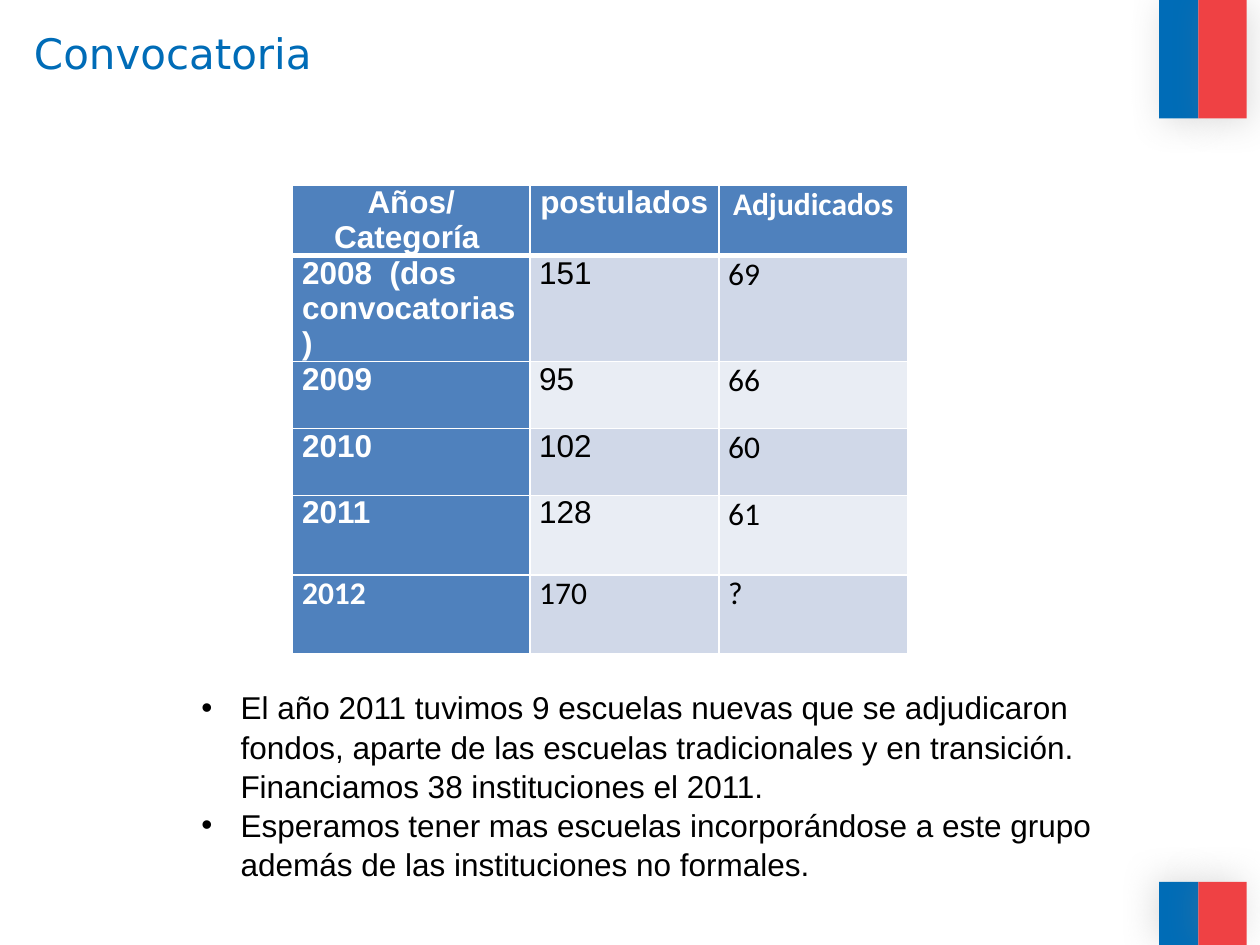
import pptx
import pptx.dml.color
import pptx.enum.shapes
import pptx.enum.text
import pptx.oxml
import pptx.oxml.ns
import pptx.util
from pptx.util import Cm

COLORS = {
    "blue": "006CB7", "red": "EF4144", "header": "4F81BD", "dark band": "D0D8E8",
    "light band": "E9EDF4", "white": "FFFFFF", "black": "000000", "shadow": "808080",
}
TITLE = "Convocatoria"
HEADINGS = ["Años/Categoría ", "postulados", "Adjudicados"]
CALLS = [
    ("2008  (dos convocatorias)", "151", "69"),
    ("2009", "95", "66"),
    ("2010", "102", "60"),
    ("2011", "128", "61"),
    ("2012", "170", "?"),
]
NOTES = [
    "El año 2011 tuvimos 9 escuelas nuevas que se adjudicaron fondos, aparte de las escuelas "
    "tradicionales y en transición. Financiamos 38 instituciones el 2011.",
    "Esperamos tener mas escuelas incorporándose a este grupo además de las instituciones "
    "no formales.",
]
COLUMN_WIDTHS = [4.78, 3.81, 3.81]
ROW_HEIGHTS = [1.35, 1.4, 1.35, 1.35, 1.6, 1.6]
FLAG_STRIPES = [("blue", 23.37, 0.79), ("red", 24.16, 0.97)]
FLAG_BLOCKS = [(0, 2.39, 45), (17.78, 1.27, 215)]  # top, height, shadow angle


def rgb(name):
    return pptx.dml.color.RGBColor.from_string(COLORS[name])


def write(paragraph, text, font="Arial", size=18, color="black", bold=False, align="LEFT"):
    run = paragraph.add_run()
    run.text = text
    run.font.name = font
    run.font.size = pptx.util.Pt(size)
    run.font.bold = bold
    run.font.color.rgb = rgb(color)
    paragraph.alignment = getattr(pptx.enum.text.PP_ALIGN, align)


def element(xml):
    return pptx.oxml.parse_xml(xml.replace(">", f" {pptx.oxml.ns.nsdecls('a')}>", 1))


def add_stripe(slide, color, left, top, width, height, angle):
    shape = slide.shapes.add_shape(
        pptx.enum.shapes.MSO_SHAPE.RECTANGLE, Cm(left), Cm(top), Cm(width), Cm(height))
    shape.fill.solid()
    shape.fill.fore_color.rgb = rgb(color)
    shape.line.fill.background()
    shape._element.spPr.append(element(
        f'<a:effectLst><a:outerShdw blurRad="{pptx.util.Pt(20)}" dist="{pptx.util.Pt(3)}" '
        f'dir="{angle * 60000}" rotWithShape="0"><a:srgbClr val="{COLORS["shadow"]}">'
        '<a:alpha val="25000"/></a:srgbClr></a:outerShdw></a:effectLst>'))


def format_cell(cell, fill, bottom_width):
    cell.margin_left = cell.margin_right = Cm(0.19)
    cell.margin_top = cell.margin_bottom = 0
    properties = cell._tc.get_or_add_tcPr()
    for side, width in (("L", 1), ("R", 1), ("T", 1), ("B", bottom_width)):
        properties.append(element(
            f'<a:ln{side} w="{pptx.util.Pt(width)}"><a:solidFill>'
            f'<a:srgbClr val="{COLORS["white"]}"/></a:solidFill></a:ln{side}>'))
    cell.fill.solid()
    cell.fill.fore_color.rgb = rgb(fill)


def add_calls_table(slide):
    rows = [HEADINGS, *CALLS]
    table = slide.shapes.add_table(
        len(rows), len(HEADINGS), Cm(5.9), Cm(3.73),
        Cm(sum(COLUMN_WIDTHS)), Cm(sum(ROW_HEIGHTS))).table
    for column, width in zip(table.columns, COLUMN_WIDTHS):
        column.width = Cm(width)
    for row_index, (values, height) in enumerate(zip(rows, ROW_HEIGHTS)):
        table.rows[row_index].height = Cm(height)
        is_header = row_index == 0
        band = "dark band" if row_index % 2 else "light band"
        for column_index, value in enumerate(values):
            cell = table.cell(row_index, column_index)
            is_label = is_header or column_index == 0
            is_calibri = column_index == 2 or row_index == len(rows) - 1
            format_cell(cell, "header" if is_label else band, 3 if is_header else 1)
            write(cell.text_frame.paragraphs[0], value,
                  font="Calibri" if is_calibri else "Arial",
                  color="white" if is_label else "black", bold=is_label,
                  align="CENTER" if is_header else "LEFT")


def add_notes_list(slide):
    frame = slide.shapes.add_textbox(Cm(3.81), Cm(13.72), Cm(18.8), Cm(4.11)).text_frame
    frame.word_wrap = True
    for index, note in enumerate(NOTES):
        paragraph = frame.add_paragraph() if index else frame.paragraphs[0]
        write(paragraph, note)
        paragraph.line_spacing = 1.04
        properties = paragraph._p.get_or_add_pPr()
        properties.set("marL", str(Cm(0.79)))
        properties.set("indent", str(-Cm(0.79)))
        properties.append(element('<a:buFont typeface="Arial"/>'.replace("/>", "></a:buFont>")))
        properties.append(element('<a:buChar char="•"></a:buChar>'))


def main():
    presentation = pptx.Presentation()
    presentation.slide_width, presentation.slide_height = Cm(25.4), Cm(19.05)
    slide = presentation.slides.add_slide(presentation.slide_layouts.get_by_name("Title Only"))
    for top, height, angle in FLAG_BLOCKS:
        for color, left, width in FLAG_STRIPES:
            add_stripe(slide, color, left, top, width, height, angle)

    title = slide.shapes.title
    title.left, title.top, title.width, title.height = Cm(0.43), Cm(0.43), Cm(22.68), Cm(3.18)
    title.text_frame.vertical_anchor = pptx.enum.text.MSO_ANCHOR.TOP
    write(title.text_frame.paragraphs[0], TITLE, font="DejaVu Sans", size=24, color="blue")

    add_calls_table(slide)
    add_notes_list(slide)
    presentation.save("out.pptx")


if __name__ == "__main__":
    main()
